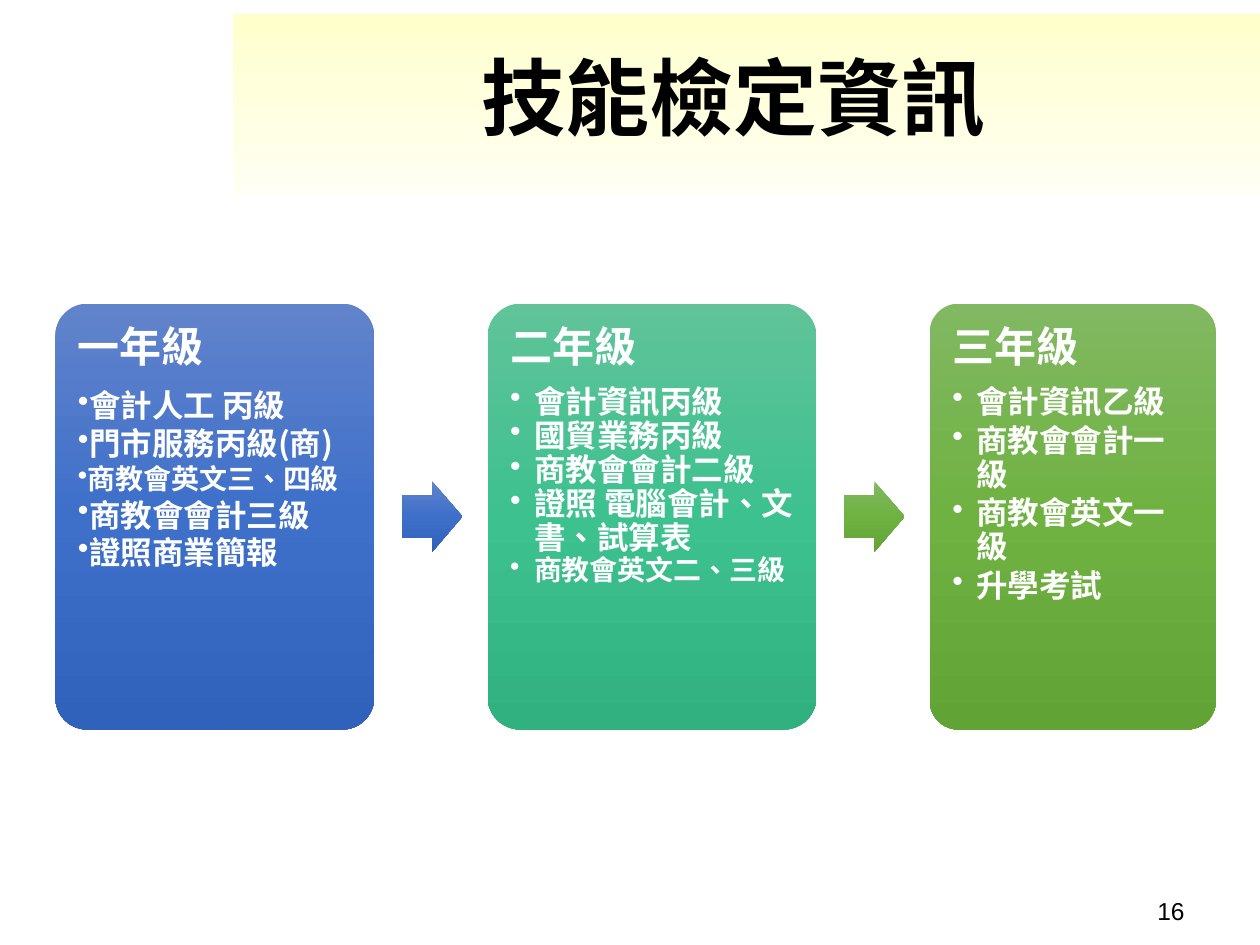
import pptx
import pptx.util
import pptx.dml.color
import pptx.enum.shapes
import pptx.enum.text
import pptx.oxml.ns
import lxml.etree

Inches, Pt = pptx.util.Inches, pptx.util.Pt
RGBColor = pptx.dml.color.RGBColor
SHAPE = pptx.enum.shapes.MSO_SHAPE
ALIGN = pptx.enum.text.PP_ALIGN
ANCHOR = pptx.enum.text.MSO_ANCHOR
qn = pptx.oxml.ns.qn

BLACK = RGBColor(0x00, 0x00, 0x00)
WHITE = RGBColor(0xFF, 0xFF, 0xFF)
CREAM = [RGBColor(0xFF, 0xFF, 0xCC), RGBColor(0xFF, 0xFF, 0xF3)]
BLUE = [RGBColor(0x61, 0x83, 0xCB), RGBColor(0x3E, 0x70, 0xCA), RGBColor(0x30, 0x62, 0xBB)]
TEAL = [RGBColor(0x60, 0xC3, 0x9A), RGBColor(0x3D, 0xC1, 0x8F), RGBColor(0x31, 0xB0, 0x80)]
GREEN = [RGBColor(0x81, 0xB8, 0x61), RGBColor(0x6F, 0xB2, 0x42), RGBColor(0x62, 0xA3, 0x36)]
CJK = "Noto Sans CJK SC"

TITLE = "技能檢定資訊"
PAGE_NUMBER = "16"
GRADES = [
    {"name": "一年級", "colors": BLUE, "width": 2.53, "indent": 0, "spacing": 1.0, "after": 0,
     "items": [("會計人工 丙級", 18), ("門市服務丙級(商)", 18), ("商教會英文三、四級", 16),
               ("商教會會計三級", 18), ("證照商業簡報", 18)]},
    {"name": "二年級", "colors": TEAL, "width": 2.61, "indent": 0.19, "spacing": 0.9, "after": 0,
     "items": [("會計資訊丙級", 18), ("國貿業務丙級", 18), ("商教會會計二級", 18),
               ("證照 電腦會計、文書、試算表", 18), ("商教會英文二、三級", 16)]},
    {"name": "三年級", "colors": GREEN, "width": 2.27, "indent": 0.19, "spacing": 0.9, "after": 2.6,
     "items": [("會計資訊乙級", 18), ("商教會會計一級", 18), ("商教會英文一級", 18),
               ("升學考試", 18)]},
]
ARROW_COLORS = [BLUE, GREEN]

CARD_LEFT, CARD_TOP, CARD_HEIGHT = 0.44, 2.41, 3.38
CARD_GAP, CARD_PADDING = 0.9, 0.08
ARROW_WIDTH, ARROW_HEIGHT, ARROW_OFFSET = 0.48, 0.56, 0.22


def add_gradient_shape(page, kind, place, colors, adjustments=()):
    """Add a borderless shape whose colours run evenly from top to bottom."""
    shape = page.shapes.add_shape(kind, *map(Inches, place))
    shape.shadow.inherit = False
    shape.line.fill.background()
    for index, value in enumerate(adjustments):
        shape.adjustments[index] = value
    shape.fill.gradient()
    shape.fill.gradient_angle = 270
    stops = shape.element.spPr.find(".//" + qn("a:gsLst"))
    for stop in list(stops):
        stops.remove(stop)
    for index, color in enumerate(colors):
        position = 100000 * index // (len(colors) - 1)
        stop = lxml.etree.SubElement(stops, qn("a:gs"), pos=str(position))
        lxml.etree.SubElement(stop, qn("a:srgbClr"), val=str(color))
    return shape


def write(para, text, size, color=WHITE, font=CJK, bold=True, align=ALIGN.LEFT,
          spacing=1.0, after=0, bullet=False, indent=0):
    para.alignment, para.line_spacing = align, spacing
    para.space_before, para.space_after = Pt(0), Pt(after)
    if bullet:
        properties = para._p.get_or_add_pPr()
        properties.set("marL", str(Inches(indent)))
        properties.set("indent", str(-Inches(indent)))
        lxml.etree.SubElement(properties, qn("a:buChar"), char="•")
    span = para.add_run()
    span.text = text
    span.font.size, span.font.bold, span.font.name = Pt(size), bold, font
    span.font.color.rgb = color
    properties = span._r.get_or_add_rPr()
    properties.set("lang", "zh-TW")
    lxml.etree.SubElement(properties, qn("a:ea"), typeface=font)


def add_text_box(page, place, margin_x=0.1, margin_y=0.1):
    frame = page.shapes.add_textbox(*map(Inches, place)).text_frame
    frame.word_wrap = True
    frame.margin_left = frame.margin_right = Inches(margin_x)
    frame.margin_top = frame.margin_bottom = Inches(margin_y)
    return frame


def add_card(page, grade, left):
    width = grade["width"]
    add_gradient_shape(page, SHAPE.ROUNDED_RECTANGLE, (left, CARD_TOP, width, CARD_HEIGHT),
                       grade["colors"], [0.1])
    frame = add_text_box(page, (left + CARD_PADDING, CARD_TOP + CARD_PADDING,
                                width - 2 * CARD_PADDING, CARD_HEIGHT - 2 * CARD_PADDING))
    write(frame.paragraphs[0], grade["name"], 24, spacing=0.9, after=8.4)
    for text, size in grade["items"]:
        para = frame.add_paragraph()
        para.level = 1
        write(para, text, size, bullet=True, indent=grade["indent"],
              spacing=grade["spacing"], after=grade["after"])


def main():
    deck = pptx.Presentation()
    deck.slide_width, deck.slide_height = Inches(10), Inches(7.5)
    page = deck.slides.add_slide(deck.slide_layouts[5])

    band = add_gradient_shape(page, SHAPE.RECTANGLE, (1.85, 0.11, 8.15, 1.43), CREAM)
    title = page.shapes.title
    title.element.addprevious(band.element)
    title.left, title.top, title.width, title.height = map(Inches, (1.85, 0.38, 7.95, 0.77))
    title.text_frame.vertical_anchor = ANCHOR.MIDDLE
    write(title.text_frame.paragraphs[0], TITLE, 48, color=BLACK, align=ALIGN.CENTER)

    left = CARD_LEFT
    arrow_top = CARD_TOP + (CARD_HEIGHT - ARROW_HEIGHT) / 2
    for index, grade in enumerate(GRADES):
        add_card(page, grade, left)
        left += grade["width"]
        if index < len(ARROW_COLORS):
            add_gradient_shape(page, SHAPE.RIGHT_ARROW,
                               (left + ARROW_OFFSET, arrow_top, ARROW_WIDTH, ARROW_HEIGHT),
                               ARROW_COLORS[index], [0.6, 0.5])
        left += CARD_GAP

    number = add_text_box(page, (7.17, 7.06, 2.33, 0.39), margin_y=0.05)
    write(number.paragraphs[0], PAGE_NUMBER, 14, color=BLACK, font="Arial", bold=False,
          align=ALIGN.RIGHT)
    deck.save("out.pptx")


if __name__ == "__main__":
    main()
